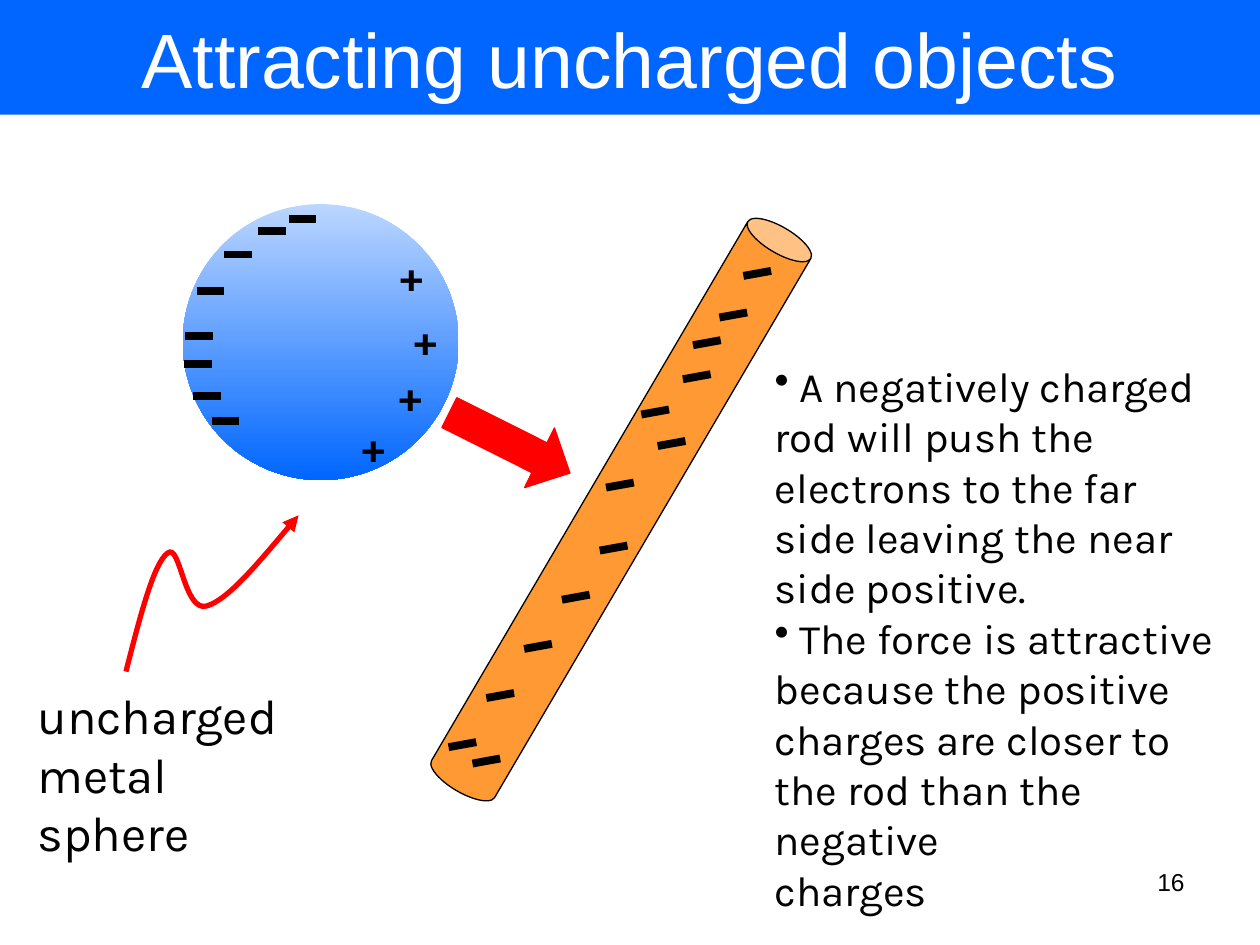
import pptx
import pptx.util
import pptx.dml.color
import pptx.enum.shapes
import pptx.enum.text
import pptx.oxml.ns
import lxml.etree

HUE = {"blue": "0066FF", "sky": "BBD6FF", "rod": "FF9933", "red": "FF0000",
       "ink": "000000", "page": "FFFFFF"}
COLS, ROWS = 100, 75
CELL = pptx.util.Inches(10) // COLS
KIND = pptx.enum.shapes.MSO_SHAPE
SIDE = pptx.enum.text.PP_ALIGN
MID = pptx.enum.text.MSO_ANCHOR.MIDDLE


def span(*cells):
    """Turn grid cells into slide lengths."""
    return [round(c * CELL) for c in cells]


def tint(name):
    """Give a named colour."""
    return pptx.dml.color.RGBColor.from_string(HUE[name])


def node(owner, tag, **attrs):
    """Add an XML child to an element."""
    item = lxml.etree.SubElement(owner, pptx.oxml.ns.qn(tag))
    for key, val in attrs.items():
        item.set(key, val)
    return item


def write(shape, lines, size, font="Karla", hue="ink", side=SIDE.LEFT, bold=False):
    """Put lines of text in a shape, one paragraph each."""
    frame = shape.text_frame
    frame.text = "\n".join(lines)
    frame.word_wrap = True
    for para in frame.paragraphs:
        para.alignment = side
        for run in para.runs:
            run.font.size = pptx.util.Pt(size)
            run.font.name = font
            run.font.bold = bold
            run.font.color.rgb = tint(hue)
    return frame


def solid(slide, kind, box, fill, edge=None, turn=0):
    """Draw a filled preset shape."""
    shape = slide.shapes.add_shape(kind, *span(*box))
    shape.shadow.inherit = False
    shape.rotation = turn
    shape.fill.solid()
    shape.fill.fore_color.rgb = tint(fill)
    if edge:
        shape.line.color.rgb = tint(edge)
        shape.line.width = pptx.util.Pt(0.75)
    else:
        shape.line.fill.background()
    return shape


def minus(group, left, top, rise=0):
    """Draw one negative charge as a short thick line."""
    line = group.shapes.add_connector(
        pptx.enum.shapes.MSO_CONNECTOR.STRAIGHT,
        *span(left, top, left + 2.2, top - rise))
    line.line.color.rgb = tint("ink")
    line.line.width = pptx.util.Pt(4.5)
    node(line._element.spPr, "a:effectLst")


def title(slide, box):
    """Draw the title band."""
    band = solid(slide, KIND.RECTANGLE, box, "blue")
    frame = write(band, ["Attracting uncharged objects"], 44, "Arial", "page", SIDE.CENTER)
    frame.vertical_anchor = MID


def rod(slide, box):
    """Draw the tilted rod and its negative charges."""
    left, top, wide, high = box
    can = solid(slide, KIND.CAN, box, "rod", "ink", 30.4)
    can.adjustments[0] = 0.36
    chain = [(-10.8 + 3 * i, 44.7 - 3.9 * i) for i in range(5)]
    loose = [(-8.9, 46), (1.7, 24.1), (4.5, 18.3), (8.6, 12.8), (12.6, 7.3),
             (5.8, 20.8), (7.8, 15.5), (10.7, 10.6)]
    group = slide.shapes.add_group_shape()
    for x, y in chain + loose:
        minus(group, left + x, top + y, 0.4)


def sphere(slide, box):
    """Draw the sphere with its parted charges."""
    left, top, wide, high = box
    ball = solid(slide, KIND.OVAL, box, "blue")
    ball.fill.gradient()
    ball.fill.gradient_angle = 270
    for stop, name, place in zip(ball.fill.gradient_stops, ("sky", "blue"), (0, 1)):
        stop.color.rgb = tint(name)
        stop.position = place
    group = slide.shapes.add_group_shape()
    for x, y in [(0.2, 10.5), (0.1, 12.7), (0.8, 15.2), (2.3, 17.2),
                 (1.1, 6.9), (3.3, 4), (6, 2.1), (8.4, 1.2)]:
        minus(group, left + x, top + y)
    for x, y in [(13.3, 16.7), (17.4, 8.2), (16.3, 3.1), (16.2, 12.6)]:
        plus = group.shapes.add_textbox(*span(left + x, top + y, 4.7, 5))
        write(plus, ["+"], 24, bold=True).word_wrap = False


def force(slide, box):
    """Draw the arrow of the pull towards the rod."""
    arrow = solid(slide, KIND.RIGHT_ARROW, box, "red", "red", 26.6)
    arrow.adjustments[1] = 0.51


def label(slide, box):
    """Write the sphere's name below a curved pointer."""
    left, top, wide, high = box
    name = slide.shapes.add_textbox(*span(left, top + 12, wide, high - 12))
    write(name, ["uncharged", "metal sphere"], 28)
    dots = [(8, 11.4), (9.1, 7.1), (10.2, 2.8), (11.3, 2), (12.3, 1.1), (12.6, 6.7),
            (14.4, 6.2), (16.1, 5.7), (18.9, 2.3), (21.7, -1)]
    dots = [span(left + x, top + y) for x, y in dots]
    pen = slide.shapes.build_freeform(*dots[0])
    pen.add_line_segments(dots[1:], close=False)
    curve = pen.convert_to_shape()
    curve.shadow.inherit = False
    curve.fill.background()
    curve.line.color.rgb = tint("red")
    curve.line.width = pptx.util.Pt(3)
    node(curve.line._get_or_add_ln(), "a:tailEnd", type="triangle")
    steps = list(curve._element.iter(pptx.oxml.ns.qn("a:lnTo")))
    track = steps[0].getparent()
    for i in range(0, len(steps), 3):
        bend = node(track, "a:cubicBezTo")
        for step in steps[i:i + 3]:
            bend.append(step[0])
            track.remove(step)


def notes(slide, box):
    """Write the two bulleted points."""
    lines = [" A negatively charged", "rod will push the", "electrons to the far",
             "side leaving the near", "side positive.", " The force is attractive",
             "because the positive", "charges are closer to",
             "the rod than the negative", "charges"]
    frame = write(slide.shapes.add_textbox(*span(*box)), lines, 24)
    for para in frame.paragraphs:
        if para.text.startswith(" "):
            node(para._p.get_or_add_pPr(), "a:buChar", char="•")


def number(slide, box):
    """Write the slide number."""
    write(slide.shapes.add_textbox(*span(*box)), ["16"], 14, "Arial", side=SIDE.RIGHT)


def main():
    """Build and save the slide."""
    deck = pptx.Presentation()
    deck.slide_width, deck.slide_height = span(COLS, ROWS)
    slide = deck.slides.add_slide(deck.slide_layouts[6])
    number(slide, (71.7, 68.3, 23.3, 5.2))
    title(slide, (0, 0, COLS, 9.1))
    rod(slide, (46.4, 14.6, 5.8, 51.7))
    label(slide, (2, 41.9, 24.3, 22.3))
    sphere(slide, (14.5, 16.2, 21.9, 21.9))
    force(slide, (35.1, 32.5, 10.7, 5.3))
    notes(slide, (60.5, 28.1, 39.5, 40.9))
    deck.save("out.pptx")


if __name__ == "__main__":
    main()
